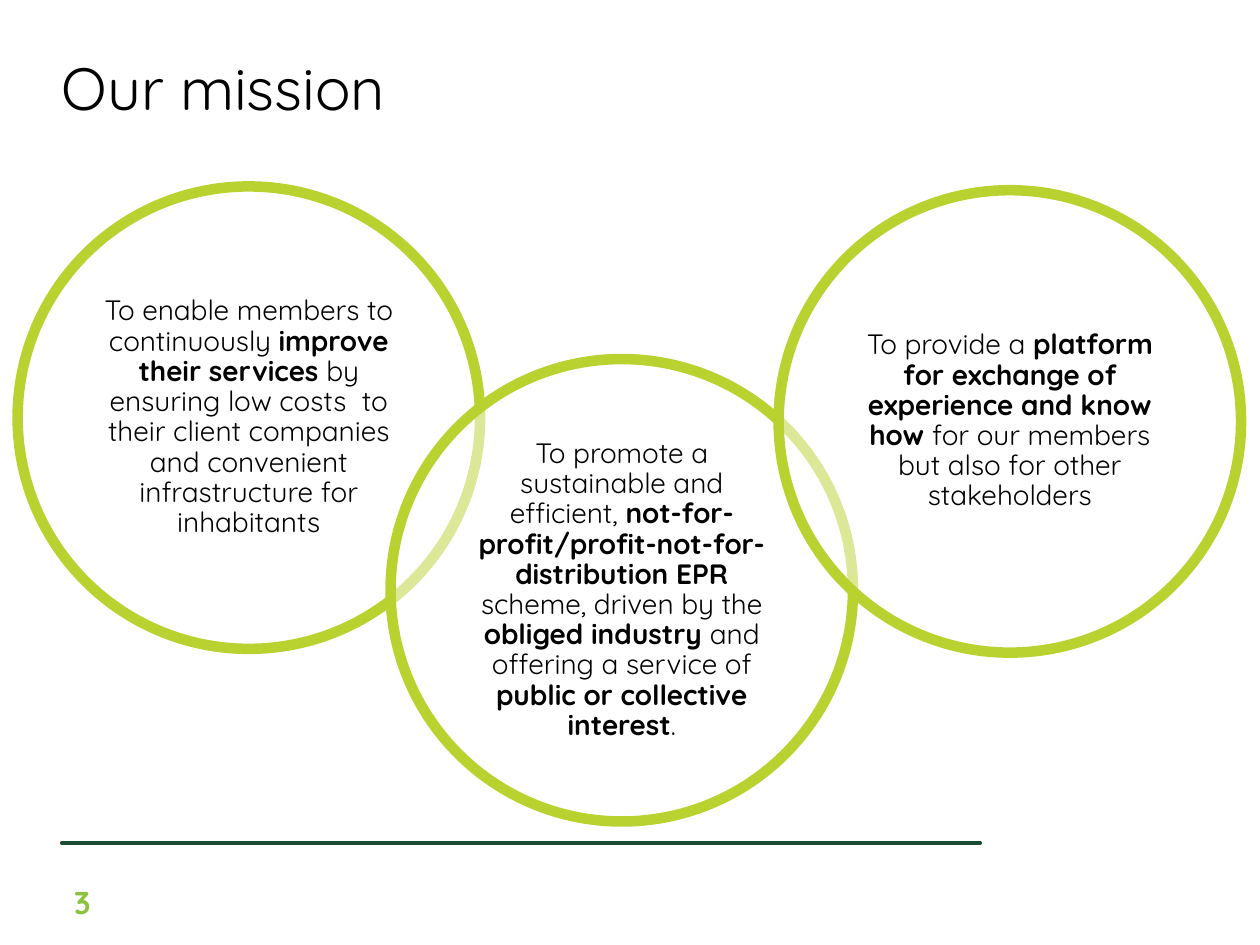
from dataclasses import dataclass

from lxml import etree
from pptx import Presentation, util as u
from pptx.dml.color import RGBColor
from pptx.enum import shapes, text
from pptx.oxml import ns

FONT = "Quicksand"
BLACK, WHITE = "000000", "FFFFFF"
LIME, LEAF, FOREST = "B9D230", "8BC33E", "1A4B33"
DIAMETER = 3.67
GOAL_SIZE = 2.6
GOAL_OFFSET = (DIAMETER - GOAL_SIZE) / 2


@dataclass
class Mission:
    left: float
    top: float
    phrases: list[str]  # regular and bold phrases alternate


MISSIONS = [
    Mission(0.14, 1.48, [
        "To enable members to continuously ",
        "improve their services ",
        "by ensuring low costs  to their client companies "
        "and convenient infrastructure for inhabitants",
    ]),
    Mission(3.1, 2.85, [
        "To promote a sustainable and efficient, ",
        "not-for-profit/profit-not-for-distribution EPR ",
        "scheme, driven by the ",
        "obliged industry ",
        "and offering a service of ",
        "public or collective interest",
        ".",
    ]),
    Mission(6.18, 1.51, [
        "To provide a ",
        "platform for exchange of experience and know how ",
        "for our members but also for other stakeholders",
    ]),
]


def color(hex_code: str) -> RGBColor:
    return RGBColor.from_string(hex_code)


def style_font(font, size: float, hex_code: str, bold: bool = False) -> None:
    font.name = FONT
    font.size = u.Pt(size)
    font.bold = bold
    font.color.rgb = color(hex_code)


def add_frame(slide, left: float, top: float, width: float, height: float,
              inset: float, anchor):
    box = slide.shapes.add_textbox(
        u.Inches(left), u.Inches(top), u.Inches(width), u.Inches(height))
    frame = box.text_frame
    frame.word_wrap = True
    frame.vertical_anchor = anchor
    frame.margin_left = frame.margin_right = u.Inches(inset)
    frame.margin_top = frame.margin_bottom = u.Inches(min(inset, 0.07))
    return frame


def add_label(slide, words: str, area: tuple[float, float, float, float],
              inset: float, anchor, size: float, hex_code: str,
              bold: bool = False) -> None:
    frame = add_frame(slide, *area, inset, anchor)
    frame.text = words
    style_font(frame.paragraphs[0].runs[0].font, size, hex_code, bold)


def add_footer_rule(slide) -> None:
    rule = slide.shapes.add_connector(
        shapes.MSO_CONNECTOR.STRAIGHT,
        u.Inches(0.49), u.Inches(6.69), u.Inches(7.78), u.Inches(6.69))
    rule.line.color.rgb = color(FOREST)
    rule.line.width = u.Pt(2)
    properties = rule._element.spPr
    properties.find(ns.qn("a:ln")).set("cap", "rnd")
    etree.SubElement(properties, ns.qn("a:effectLst"))


def add_mission(slide, mission: Mission) -> None:
    # Half-transparent circle
    circle = slide.shapes.add_shape(
        shapes.MSO_SHAPE.OVAL, u.Inches(mission.left), u.Inches(mission.top),
        u.Inches(DIAMETER), u.Inches(DIAMETER))
    circle.shadow.inherit = False
    circle.fill.solid()
    circle.fill.fore_color.rgb = color(WHITE)
    fill_color = circle._element.spPr.find(ns.qn("a:solidFill"))[0]
    etree.SubElement(fill_color, ns.qn("a:alpha"), val="50000")
    circle.line.color.rgb = color(LIME)
    circle.line.width = u.Pt(6)

    # Centred goal with emphasised phrases
    frame = add_frame(
        slide, mission.left + GOAL_OFFSET, mission.top + GOAL_OFFSET,
        GOAL_SIZE, GOAL_SIZE, 0.07, text.MSO_ANCHOR.MIDDLE)
    goal = frame.paragraphs[0]
    goal.alignment = text.PP_ALIGN.CENTER
    goal.line_spacing = 0.9
    for index, phrase in enumerate(mission.phrases):
        run = goal.add_run()
        run.text = phrase
        style_font(run.font, 16, BLACK, bold=index % 2 == 1)


def main() -> None:
    deck = Presentation()
    deck.slide_width, deck.slide_height = u.Inches(10), u.Inches(7.5)
    slide = deck.slides.add_slide(deck.slide_layouts[6])

    # Footer
    add_footer_rule(slide)
    add_label(slide, "3", (0.49, 6.94, 0.61, 0.4), 0.1,
              text.MSO_ANCHOR.TOP, 18, LEAF, bold=True)

    # Title
    add_label(slide, "Our mission", (0.49, 0, 9.06, 1.38), 0,
              text.MSO_ANCHOR.MIDDLE, 34, BLACK)

    # Overlapping circles
    for mission in MISSIONS:
        add_mission(slide, mission)

    deck.save("out.pptx")


if __name__ == "__main__":
    main()
